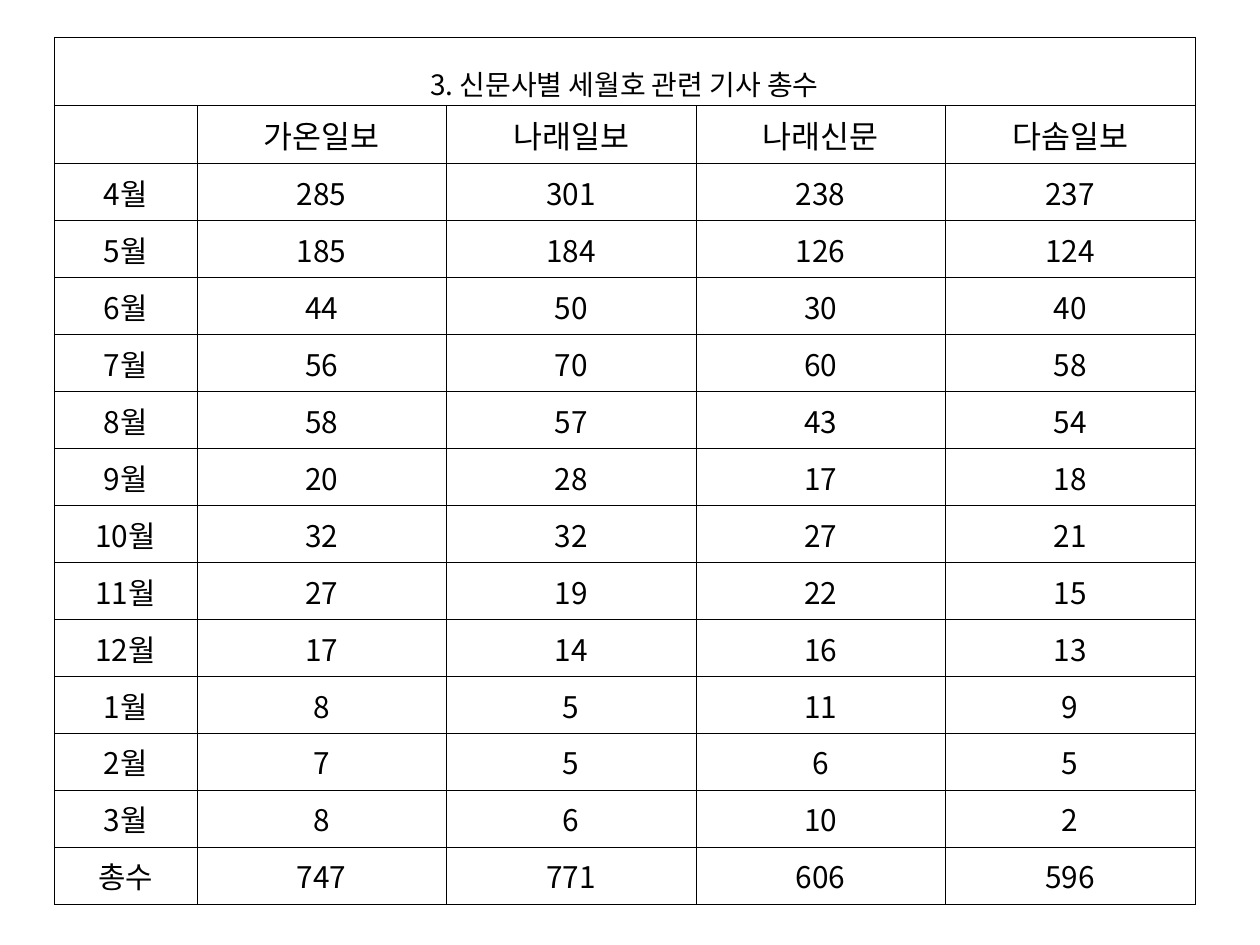
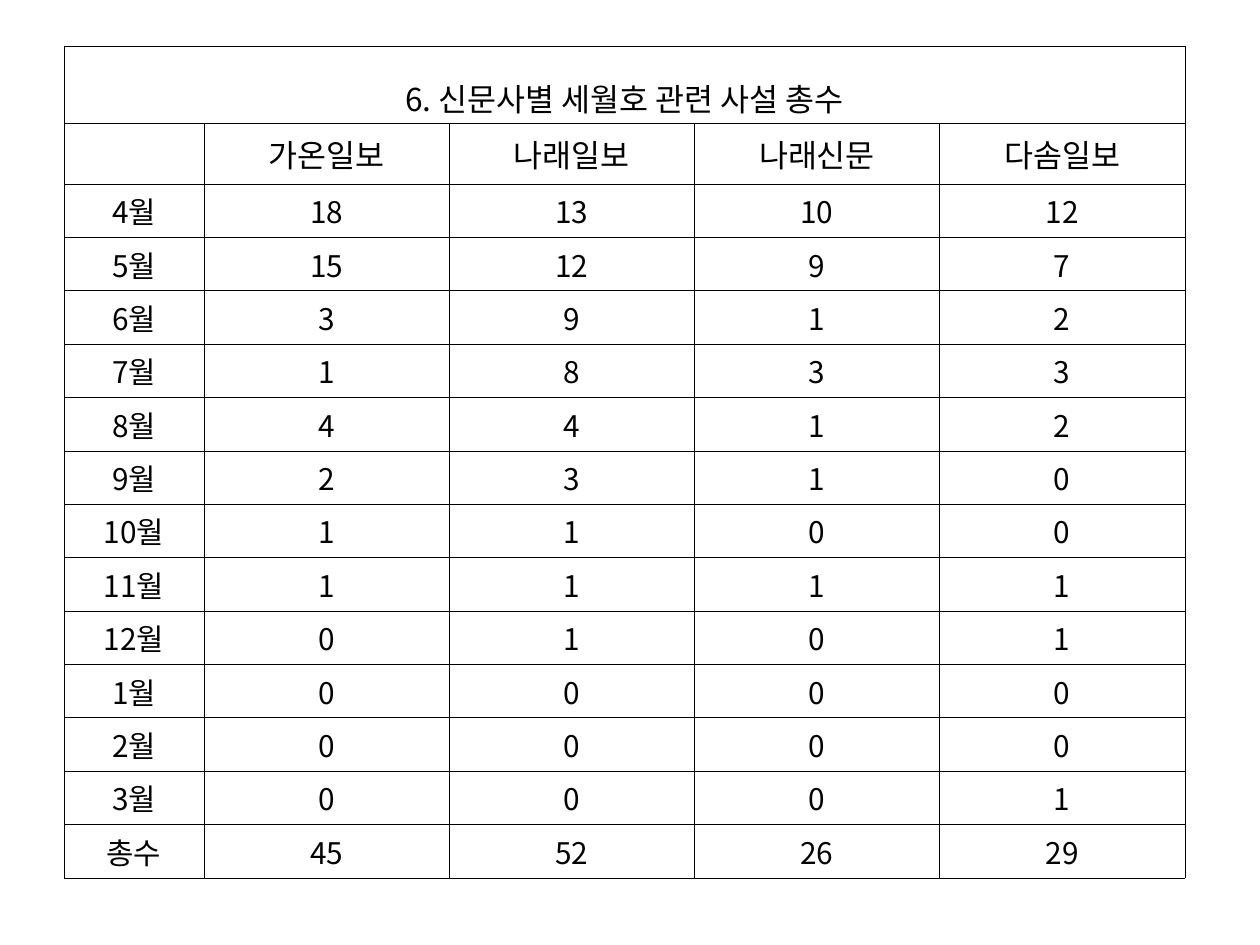
from pptx import Presentation
from pptx.dml.color import RGBColor
from pptx.enum.text import MSO_ANCHOR, PP_ALIGN
from pptx.oxml.ns import qn
from pptx.util import Inches, Pt
from lxml.etree import SubElement

PX = Inches(1) / 126
COLORS = {"ink": "000000", "paper": "FFFFFF"}
FONT = "Noto Sans CJK KR"
BORDER_POINTS = 0.28
HEADER_SIZE = 18
BODY_SIZE = 17
TITLE_SPACING = 1.6

NEWSPAPERS = ["가온일보", "나래일보", "나래신문", "다솜일보"]
MONTHS = [4, 5, 6, 7, 8, 9, 10, 11, 12, 1, 2, 3]

ARTICLES = [
    (285, 301, 238, 237),
    (185, 184, 126, 124),
    (44, 50, 30, 40),
    (56, 70, 60, 58),
    (58, 57, 43, 54),
    (20, 28, 17, 18),
    (32, 32, 27, 21),
    (27, 19, 22, 15),
    (17, 14, 16, 13),
    (8, 5, 11, 9),
    (7, 5, 6, 5),
    (8, 6, 10, 2),
]
EDITORIALS = [
    (18, 13, 10, 12),
    (15, 12, 9, 7),
    (3, 9, 1, 2),
    (1, 8, 3, 3),
    (4, 4, 1, 2),
    (2, 3, 1, 0),
    (1, 1, 0, 0),
    (1, 1, 1, 1),
    (0, 1, 0, 1),
    (0, 0, 0, 0),
    (0, 0, 0, 0),
    (0, 0, 0, 1),
]


def px(length):
    return round(length * PX)


def add_borders(cell):
    properties = cell._tc.get_or_add_tcPr()
    for side in ("a:lnL", "a:lnR", "a:lnT", "a:lnB"):
        line = SubElement(properties, qn(side), w=str(Pt(BORDER_POINTS)))
        fill = SubElement(line, qn("a:solidFill"))
        SubElement(fill, qn("a:srgbClr"), val=COLORS["ink"])


def style_cell(cell):
    add_borders(cell)
    cell.fill.solid()
    cell.fill.fore_color.rgb = RGBColor.from_string(COLORS["paper"])
    cell.vertical_anchor = MSO_ANCHOR.MIDDLE
    cell.margin_left = cell.margin_right = px(8)
    cell.margin_top = cell.margin_bottom = px(2)


def write_cell(cell, text, size):
    paragraph = cell.text_frame.paragraphs[0]
    paragraph.text = text
    paragraph.alignment = PP_ALIGN.CENTER
    for run in paragraph.runs:
        run.font.size = Pt(size)
        run.font.name = FONT
        run.font.color.rgb = RGBColor.from_string(COLORS["ink"])
        SubElement(run.font._element, qn("a:ea"), typeface=FONT)


def build_rows(counts):
    totals = [sum(column) for column in zip(*counts)]
    labels = [f"{month}월" for month in MONTHS] + ["총수"]
    body = [[label, *values] for label, values in zip(labels, counts + [totals])]
    return [["", *NEWSPAPERS]] + body


def add_count_table(slide, title, title_size, counts, frame, label_width, title_height,
                    header_height, body_height):
    left, top, width = frame
    rows = build_rows(counts)
    body_count = len(rows) - 1
    height = title_height + header_height + body_height
    shape = slide.shapes.add_table(len(rows) + 1, len(rows[0]),
                                   px(left), px(top), px(width), px(height))
    table = shape.table
    table.first_row = table.horz_banding = False

    count_width = (width - label_width) / len(NEWSPAPERS)
    for column, column_width in zip(table.columns, [label_width] + [count_width] * len(NEWSPAPERS)):
        column.width = px(column_width)
    row_heights = [title_height, header_height] + [body_height / body_count] * body_count
    for row, row_height in zip(table.rows, row_heights):
        row.height = px(row_height)

    for cell in table.iter_cells():
        style_cell(cell)
    title_cell = table.cell(0, 0)
    title_cell.merge(table.cell(0, len(NEWSPAPERS)))
    write_cell(title_cell, title, title_size)
    title_cell.text_frame.paragraphs[0].line_spacing = TITLE_SPACING

    for row_index, values in enumerate(rows, start=1):
        size = HEADER_SIZE if row_index == 1 else BODY_SIZE
        for column_index, value in enumerate(values):
            if value != "":
                write_cell(table.cell(row_index, column_index), str(value), size)


def main():
    presentation = Presentation()
    presentation.slide_width = px(1260)
    presentation.slide_height = px(945)
    blank_layout = presentation.slide_layouts[6]

    articles_slide = presentation.slides.add_slide(blank_layout)
    add_count_table(articles_slide, "3. 신문사별 세월호 관련 기사 총수", 16, ARTICLES,
                    frame=(54, 37, 1141), label_width=143,
                    title_height=53, header_height=58, body_height=741)

    editorials_slide = presentation.slides.add_slide(blank_layout)
    add_count_table(editorials_slide, "6. 신문사별 세월호 관련 사설 총수", 18, EDITORIALS,
                    frame=(64, 46, 1121), label_width=140,
                    title_height=58, header_height=61, body_height=694)

    presentation.save("out.pptx")


if __name__ == "__main__":
    main()
